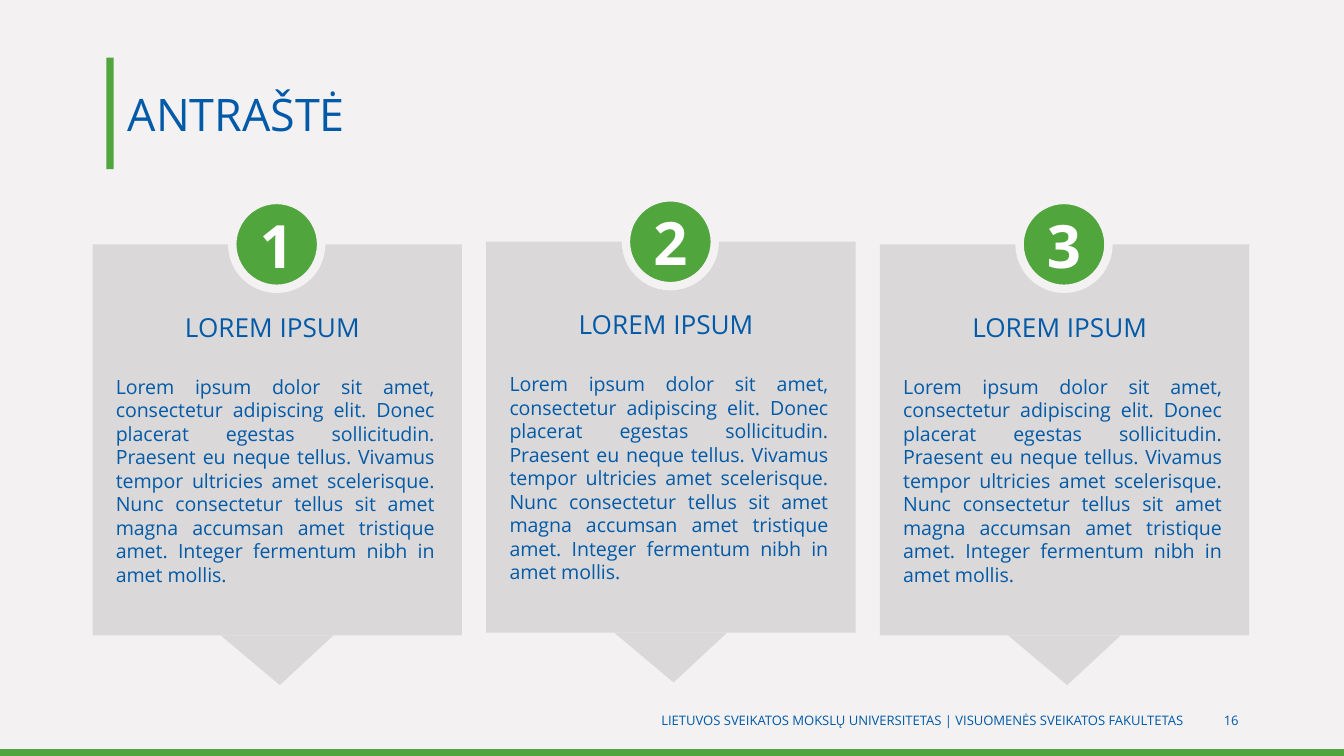
"""Build a slide of three numbered text cards."""
from pptx import Presentation
from pptx.dml.color import RGBColor
from pptx.enum.shapes import MSO_SHAPE
from pptx.enum.text import MSO_ANCHOR, PP_ALIGN
from pptx.util import Cm, Pt

GREEN = RGBColor(0x50, 0xA5, 0x3C)
BLUE = RGBColor(0x01, 0x5A, 0xA7)
GREY = RGBColor(0xDB, 0xD8, 0xD9)
PALE = RGBColor(0xF3, 0xF1, 0xF2)
WHITE = RGBColor(0xFF, 0xFF, 0xFF)
BODY = (
    "Lorem ipsum dolor sit amet, consectetur adipiscing elit. Donec placerat "
    "egestas sollicitudin. Praesent eu neque tellus. Vivamus tempor ultricies "
    "amet scelerisque. Nunc consectetur tellus sit amet magna accumsan amet "
    "tristique amet. Integer fermentum nibh in amet mollis."
)
FOOTER = "LIETUVOS SVEIKATOS MOKSLŲ UNIVERSITETAS | VISUOMENĖS SVEIKATOS FAKULTETAS"


class Deck:
    font = "Open Sans"

    def __init__(self, width, height):
        self.deck = Presentation()
        self.deck.slide_width, self.deck.slide_height = Cm(width), Cm(height)
        self.slide = self.deck.slides.add_slide(self.deck.slide_layouts[5])
        self.home = self.slide.shapes
        ground = self.slide.background.fill
        ground.solid()
        ground.fore_color.rgb = PALE

    def label(self, shape, text, size, align, color=BLUE, anchor=MSO_ANCHOR.MIDDLE, bold=False):
        frame = shape.text_frame
        frame.text = text
        frame.word_wrap = True
        frame.vertical_anchor = anchor
        para = frame.paragraphs[0]
        para.alignment = align
        para.space_before = Pt(0)
        font = para.font
        font.name, font.size, font.bold = self.font, Pt(size), bold
        font.color.rgb = color

    def title(self, text, left, top, width, height):
        shape = self.slide.shapes.title
        shape.left, shape.top = Cm(left), Cm(top)
        shape.width, shape.height = Cm(width), Cm(height)
        self.label(shape, text, 24, PP_ALIGN.LEFT)

    def text(self, text, left, top, width, height, size, align, anchor=MSO_ANCHOR.MIDDLE):
        box = self.home.add_textbox(Cm(left), Cm(top), Cm(width), Cm(height))
        self.label(box, text, size, align, anchor=anchor)

    def shape(self, kind, left, top, width, height, fill):
        shape = self.home.add_shape(kind, Cm(left), Cm(top), Cm(width), Cm(height))
        shape.shadow.inherit = False
        shape.fill.solid()
        shape.fill.fore_color.rgb = fill
        shape.line.fill.background()
        return shape

    def badge(self, text, left, top, size):
        disc = self.shape(MSO_SHAPE.OVAL, left, top, size, size, GREEN)
        disc.line.color.rgb = PALE
        disc.line.width = Pt(4.5)
        frame = disc.text_frame
        frame.margin_left = frame.margin_right = 0
        frame.margin_top = frame.margin_bottom = 0
        self.label(disc, text, 32, PP_ALIGN.CENTER, WHITE, bold=True)

    def card(self, number, left, top):
        self.home = self.slide.shapes.add_group_shape().shapes
        self.shape(MSO_SHAPE.RECTANGLE, left, top, 6.98, 7.39, GREY)
        self.badge(number, left + 2.64, top - 0.84, 1.68)
        tip = self.shape(MSO_SHAPE.ISOSCELES_TRIANGLE, left + 2.42, top + 7.39, 2.13, 0.94, GREY)
        tip.rotation = 180
        tip.adjustments[0] = 0.475
        self.text(BODY, left + 0.19, top + 2.34, 6.53, 4.29, 10.5,
                  PP_ALIGN.JUSTIFY, MSO_ANCHOR.TOP)
        self.text("LOREM IPSUM", left + 0.11, top + 1.14, 6.58, 0.86, 14,
                  PP_ALIGN.CENTER, MSO_ANCHOR.TOP)
        self.home = self.slide.shapes


def main():
    deck = Deck(25.4, 14.29)
    deck.shape(MSO_SHAPE.RECTANGLE, 0, 14.16, 25.4, 0.13, GREEN)
    deck.shape(MSO_SHAPE.RECTANGLE, 2.01, 1.09, 0.14, 2.11, GREEN)
    deck.text(FOOTER, 4.27, 13.23, 18.34, 0.76, 7, PP_ALIGN.RIGHT)
    deck.text("16", 22.75, 13.23, 0.91, 0.76, 7, PP_ALIGN.RIGHT)
    deck.title("ANTRAŠTĖ", 2.16, 1.09, 21.49, 2.11)
    for step, top in enumerate((4.62, 4.57, 4.62)):
        deck.card(str(step + 1), 1.75 + 7.44 * step, top)
    deck.deck.save("out.pptx")


if __name__ == "__main__":
    main()
